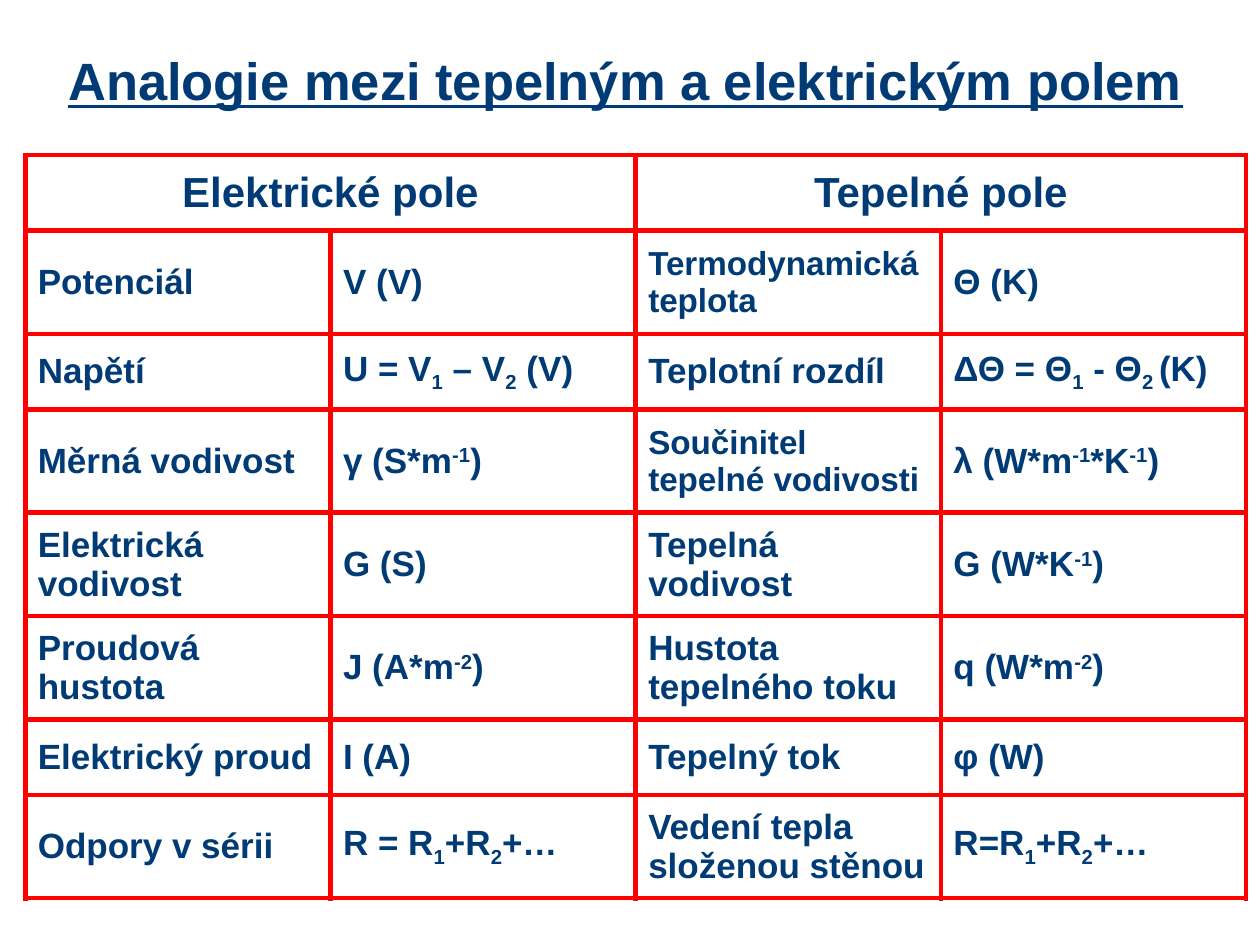
from lxml.etree import SubElement
from pptx import Presentation
from pptx.dml.color import RGBColor
from pptx.enum.text import MSO_ANCHOR, PP_ALIGN
from pptx.oxml.ns import qn
from pptx.util import Pt

NAVY = "003B76"
RED = "FF0000"
SHORT, TALL = 43.2, 59.04

HEADINGS = ["Elektrické pole", "Tepelné pole"]
ROWS = [
    (TALL, ["Potenciál", "V (V)", "Termodynamická teplota", "Θ (K)"]),
    (SHORT, ["Napětí", "U = V|1| – V|2| (V)", "Teplotní rozdíl", "ΔΘ = Θ|1| - Θ|2 |(K)"]),
    (TALL, ["Měrná vodivost", "γ (S*m|-1|)", "Součinitel tepelné vodivosti", "λ (W*m|-1|*K|-1|)"]),
    (TALL, ["Elektrická vodivost", "G (S)", "Tepelná vodivost", "G (W*K|-1|)"]),
    (TALL, ["Proudová hustota", "J (A*m|-2|)", "Hustota tepelného toku", "q (W*m|-2|)"]),
    (SHORT, ["Elektrický proud", "I (A)", "Tepelný tok", "φ (W)"]),
    (TALL, ["Odpory v sérii", "R = R|1|+R|2|+…", "Vedení tepla složenou stěnou", "R=R|1|+R|2|+…"]),
]
SMALLER = {"Termodynamická teplota", "Součinitel tepelné vodivosti"}


def color(value):
    return RGBColor.from_string(value)


def write(frame, text, size=20, align=PP_ALIGN.LEFT, underline=False, before=0):
    frame.word_wrap = True
    para = frame.paragraphs[0]
    para.alignment = align
    para.space_before = Pt(before)
    for index, piece in enumerate(text.split("|")):
        span = para.add_run()
        span.text = piece
        font = span.font
        font.name = "Arial"
        font.size = Pt(size)
        font.bold = True
        font.underline = underline
        font.color.rgb = color(NAVY)
        if index % 2:
            baseline = 30000 if piece.startswith("-") else -25000
            span._r.get_or_add_rPr().set("baseline", str(baseline))


def add_title(page, left, top, width, height):
    box = page.shapes.add_textbox(Pt(left), Pt(top), Pt(width), Pt(height))
    box.text_frame.vertical_anchor = MSO_ANCHOR.MIDDLE
    write(box.text_frame, "Analogie mezi tepelným a elektrickým polem",
          size=30, align=PP_ALIGN.CENTER, underline=True)


def format_cell(cell):
    properties = cell._tc.get_or_add_tcPr()
    for side in ("lnL", "lnR", "lnT", "lnB"):
        line = SubElement(properties, qn(f"a:{side}"), w=str(Pt(3)))
        fill = SubElement(line, qn("a:solidFill"))
        SubElement(fill, qn("a:srgbClr"), val=RED)
    cell.fill.background()
    cell.vertical_anchor = MSO_ANCHOR.MIDDLE


def add_analogy_table(page, left, top, width):
    heights = [SHORT] + [height for height, _ in ROWS]
    table = page.shapes.add_table(
        len(heights), 4, Pt(left), Pt(top), Pt(width), Pt(sum(heights))).table
    table.first_row = False
    table.horz_banding = False
    for column in table.columns:
        column.width = Pt(width / 4)
    for row, height in zip(table.rows, heights):
        row.height = Pt(height)
        for cell in row.cells:
            format_cell(cell)
    for index, heading in enumerate(HEADINGS):
        cell = table.cell(0, 2 * index)
        cell.merge(table.cell(0, 2 * index + 1))
        write(cell.text_frame, heading, size=24, align=PP_ALIGN.CENTER, before=4.8)
    for row_index, (_, texts) in enumerate(ROWS, start=1):
        for column_index, text in enumerate(texts):
            size = 19 if text in SMALLER else 20
            write(table.cell(row_index, column_index).text_frame, text,
                  size=size, before=size * 0.2)


def main():
    deck = Presentation()
    deck.slide_width, deck.slide_height = Pt(720), Pt(540)
    page = deck.slides.add_slide(deck.slide_layouts[6])
    page.background.fill.solid()
    page.background.fill.fore_color.rgb = color("FFFFFF")
    add_title(page, 14.4, 20.16, 686.16, 51.12)
    add_analogy_table(page, 14.4, 88.56, 697.68)
    deck.save("out.pptx")


if __name__ == "__main__":
    main()
